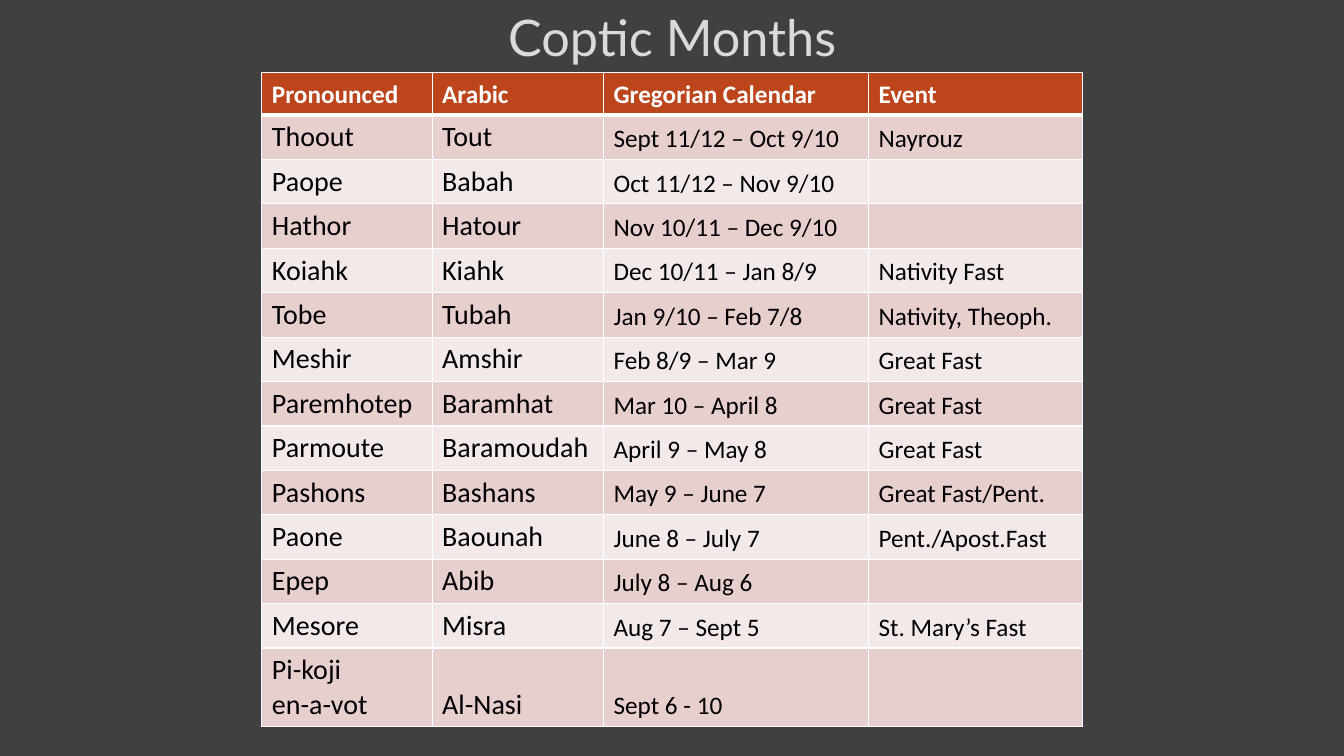
"""Build the Coptic Months slide: a title above a calendar table."""
from dataclasses import astuple, dataclass

from lxml import etree
from pptx import Presentation
from pptx import util as u
from pptx.dml.color import RGBColor
from pptx.enum import text
from pptx.oxml import parse_xml
from pptx.oxml.ns import nsdecls, qn

BACKGROUND = "404040"
WHITE = "FFFFFF"
HEADER_FILL = "BC451B"
BAND_FILLS = ("E7CFCD", "F3E9E8")
COLUMN_WIDTHS = (4.29, 4.32, 6.68, 5.38)
ROW_HEIGHT = 1.07
LAST_ROW_HEIGHT = 1.83
NAME_COLUMNS = 2


@dataclass(frozen=True)
class Month:
    pronounced: str
    arabic: str
    gregorian: str
    event: str = ""


HEADER = Month("Pronounced", "Arabic", "Gregorian Calendar", "Event")
MONTHS = (
    Month("Thoout", "Tout", "Sept 11/12 – Oct 9/10", "Nayrouz"),
    Month("Paope", "Babah", "Oct 11/12 – Nov 9/10"),
    Month("Hathor", "Hatour", "Nov 10/11 – Dec 9/10"),
    Month("Koiahk", "Kiahk", "Dec 10/11 – Jan 8/9", "Nativity Fast"),
    Month("Tobe", "Tubah", "Jan 9/10 – Feb 7/8", "Nativity, Theoph."),
    Month("Meshir", "Amshir", "Feb 8/9 – Mar 9", "Great Fast"),
    Month("Paremhotep", "Baramhat", "Mar 10 – April 8", "Great Fast"),
    Month("Parmoute", "Baramoudah", "April 9 – May 8", "Great Fast"),
    Month("Pashons", "Bashans", "May 9 – June 7", "Great Fast/Pent."),
    Month("Paone", "Baounah", "June 8 – July 7", "Pent./Apost.Fast"),
    Month("Epep", "Abib", "July 8 – Aug 6"),
    Month("Mesore", "Misra", "Aug 7 – Sept 5", "St. Mary’s Fast"),
    Month("Pi-koji\ven-a-vot", "Al-Nasi", "Sept 6 - 10"),
)


def paint(fill, colour: str) -> None:
    fill.solid()
    fill.fore_color.rgb = RGBColor.from_string(colour)


def write(para, words: str, colour: str, **formats) -> None:
    para.text = words
    for span in para.runs:
        paint(span.font.fill, colour)
        for name, value in formats.items():
            setattr(span.font, name, value)


def add_glyph_effects(span) -> None:
    props = span._r.get_or_add_rPr()
    outline = parse_xml(
        f'<a:ln {nsdecls("a")} w="9525"><a:solidFill><a:srgbClr val="{BACKGROUND}">'
        '<a:alpha val="10000"/></a:srgbClr></a:solidFill><a:prstDash val="solid"/></a:ln>')
    shadow = parse_xml(
        f'<a:effectLst {nsdecls("a")}><a:outerShdw blurRad="38100" dist="25400" dir="2700000">'
        '<a:srgbClr val="000000"><a:alpha val="50000"/></a:srgbClr></a:outerShdw></a:effectLst>')
    props.insert(0, outline)
    props.find(qn("a:solidFill")).addnext(shadow)


def add_title(page) -> None:
    title = page.shapes.title
    box = dict(left=u.Cm(5.51), top=u.Cm(0), width=u.Cm(22.86), height=u.Cm(1.83))
    for name, value in box.items():
        setattr(title, name, value)
    frame = title.text_frame
    frame.auto_size = text.MSO_AUTO_SIZE.NONE
    frame.vertical_anchor = text.MSO_ANCHOR.MIDDLE
    para = frame.paragraphs[0]
    write(para, "Coptic Months", "DADADA", size=u.Pt(36), name="Lato")
    para.alignment = text.PP_ALIGN.CENTER
    add_glyph_effects(para.runs[0])


def add_borders(cell, widths: dict[str, float]) -> None:
    props = cell._tc.get_or_add_tcPr()
    for side, width in widths.items():
        line = etree.SubElement(props, qn(f"a:ln{side}"), w=str(u.Pt(width)))
        fill = etree.SubElement(line, qn("a:solidFill"))
        etree.SubElement(fill, qn("a:srgbClr"), val=WHITE)


def fill_cell(cell, words: str, row: int, column: int) -> None:
    is_header = row == 0
    add_borders(cell, {"L": 1, "R": 1, "T": 3 if row == 1 else 1, "B": 3 if is_header else 1})
    paint(cell.fill, HEADER_FILL if is_header else BAND_FILLS[(row - 1) % 2])
    cell.vertical_anchor = text.MSO_ANCHOR.BOTTOM
    if words:
        size = 20 if column < NAME_COLUMNS and not is_header else 18
        write(cell.text_frame.paragraphs[0], words, WHITE if is_header else "000000",
              size=u.Pt(size), name="Calibri", bold=is_header)


def add_calendar(page) -> None:
    rows = (HEADER, *MONTHS)
    heights = [ROW_HEIGHT] * len(MONTHS) + [LAST_ROW_HEIGHT]
    table = page.shapes.add_table(
        len(rows), len(COLUMN_WIDTHS), u.Cm(6.6), u.Cm(1.83),
        u.Cm(sum(COLUMN_WIDTHS)), u.Cm(sum(heights))).table
    for column, width in zip(table.columns, COLUMN_WIDTHS):
        column.width = u.Cm(width)
    for row, (month, height) in enumerate(zip(rows, heights)):
        table.rows[row].height = u.Cm(height)
        for column, words in enumerate(astuple(month)):
            fill_cell(table.cell(row, column), words, row, column)


def main() -> None:
    deck = Presentation()
    deck.slide_width, deck.slide_height = u.Cm(33.87), u.Cm(19.05)
    page = deck.slides.add_slide(deck.slide_layouts.get_by_name("Title Only"))
    paint(page.background.fill, BACKGROUND)
    add_title(page)
    add_calendar(page)
    deck.save("out.pptx")


if __name__ == "__main__":
    main()
